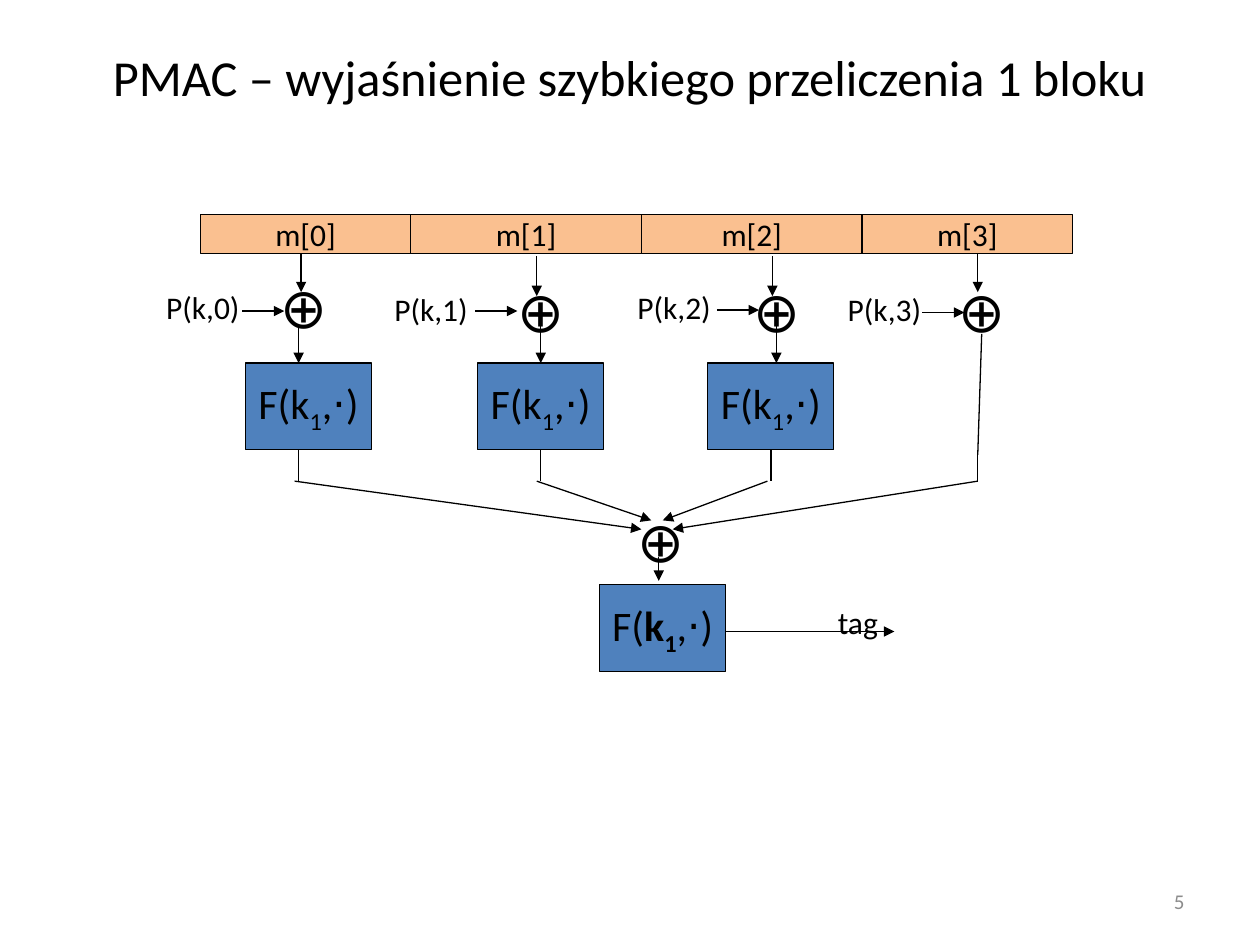
from lxml.etree import SubElement
from pptx import Presentation
from pptx.dml.color import RGBColor
from pptx.enum.shapes import MSO_CONNECTOR, MSO_SHAPE
from pptx.enum.text import MSO_ANCHOR, MSO_AUTO_SIZE, PP_ALIGN
from pptx.oxml.ns import qn
from pptx.util import Cm, Pt

BLACK, GREY, ORANGE, BLUE = "000000", "8C8C8C", "FAC090", "4F81BD"
FUNCTION_RUNS = [("F(k", {}), ("1", {"subscript": True}), (",⋅)", {})]
TAG_FUNCTION_RUNS = [("F(", {}), ("k", {"bold": True}),
                     ("1", {"bold": True, "subscript": True}), (",⋅)", {})]


def color(hex_string):
    return RGBColor.from_string(hex_string)


def set_values(target, values):
    for name, value in values.items():
        setattr(target, name, value)


class Diagram:
    """Holds the style and the current slide; all lengths are centimetres."""
    font = "Calibri"
    line_width = Pt(0.75)
    xor_size = (1.4, 1.63)
    label_height = 1.02
    function_size = (2.54, 1.75)

    def __init__(self, slide):
        self.slide = slide

    def fill_text(self, shape, runs, size, align=PP_ALIGN.LEFT, text_color=BLACK, **frame):
        """Fill the shape with one paragraph; runs is a string or (text, format) pairs."""
        set_values(shape.text_frame, {"word_wrap": False, **frame})
        paragraph = shape.text_frame.paragraphs[0]
        paragraph.alignment = align
        for text, style in ([(runs, {})] if isinstance(runs, str) else runs):
            run = paragraph.add_run()
            run.text = text
            set_values(run.font, {"name": self.font, "size": Pt(size),
                                  "bold": style.get("bold", False)})
            run.font.color.rgb = color(text_color)
            if style.get("subscript"):
                run._r.get_or_add_rPr().set("baseline", "-25000")

    def title(self, text, left, top, width, height):
        shape = self.slide.shapes.title
        set_values(shape, {"left": Cm(left), "top": Cm(top),
                           "width": Cm(width), "height": Cm(height)})
        self.fill_text(shape, text, 28.8, PP_ALIGN.CENTER, word_wrap=True,
                       vertical_anchor=MSO_ANCHOR.MIDDLE, auto_size=MSO_AUTO_SIZE.NONE)

    def text(self, text, left, top, width, height, size=18, **style):
        shape = self.slide.shapes.add_textbox(Cm(left), Cm(top), Cm(width), Cm(height))
        self.fill_text(shape, text, size, **style)

    def label(self, text, left, top, width):
        self.text(text, left, top, width, self.label_height,
                  auto_size=MSO_AUTO_SIZE.SHAPE_TO_FIT_TEXT)

    def xor(self, left, top):
        self.text("⊕", left, top, *self.xor_size, size=32,
                  auto_size=MSO_AUTO_SIZE.SHAPE_TO_FIT_TEXT)

    def box(self, runs, left, top, width, height, fill, size):
        shape = self.slide.shapes.add_shape(
            MSO_SHAPE.RECTANGLE, Cm(left), Cm(top), Cm(width), Cm(height))
        shape.shadow.inherit = False
        shape.fill.solid()
        shape.fill.fore_color.rgb = color(fill)
        shape.line.color.rgb = color(BLACK)
        shape.line.width = self.line_width
        self.fill_text(shape, runs, size, PP_ALIGN.CENTER,
                       vertical_anchor=MSO_ANCHOR.MIDDLE)

    def function(self, runs, left, top):
        self.box(runs, left, top, *self.function_size, BLUE, 24)

    def line(self, x1, y1, x2, y2, arrow=False):
        connector = self.slide.shapes.add_connector(
            MSO_CONNECTOR.STRAIGHT, Cm(x1), Cm(y1), Cm(x2), Cm(y2))
        connector.line.color.rgb = color(BLACK)
        connector.line.width = self.line_width
        if arrow:
            SubElement(connector.line._get_or_add_ln(), qn("a:tailEnd"), type="triangle")
        SubElement(connector._element.spPr, qn("a:effectLst"))

    def arrow(self, x1, y1, x2, y2):
        self.line(x1, y1, x2, y2, arrow=True)


def draw_blocks(diagram):
    """Draw the message row, then each block's masking with its key."""
    left = 4.04
    for index, width in enumerate([4.24, 4.65, 4.45, 4.24]):
        diagram.box(f"m[{index}]", left, 4.32, width, 0.79, ORANGE, 18)
        left += width

    # xor left, top; message arrow x, top, bottom; label left, top; key arrow x, y
    columns = [
        (5.41, 5.36, 6.07, 5.11, 5.89, 3.1, 5.69, 4.88, 6.27),
        (10.19, 5.44, 10.82, 5.16, 5.97, 7.7, 5.72, 9.58, 6.27),
        (14.94, 5.44, 15.57, 5.16, 5.97, 12.6, 5.69, 14.45, 6.25),
        (19.08, 5.44, 19.71, 5.11, 5.89, 16.84, 5.72, 18.59, 6.3),
    ]
    for index, column in enumerate(columns):
        xor_x, xor_y, message_x, start, end, label_x, label_y, key_x, key_y = column
        diagram.xor(xor_x, xor_y)
        diagram.arrow(message_x, start, message_x, end)
        diagram.label(f"P(k,{index})", label_x, label_y, 2.01)
        diagram.arrow(key_x, key_y, key_x + 0.85, key_y)


def draw_functions(diagram):
    # box left, x of the arrow in, x of the line out
    for left, in_x, out_x in [(4.95, 6.02, 6.02), (9.63, 10.9, 10.9), (14.27, 15.65, 15.54)]:
        diagram.function(FUNCTION_RUNS, left, 7.32)
        diagram.arrow(in_x, 6.53, in_x, 7.32)
        diagram.line(out_x, 9.07, out_x, 9.7)
    diagram.line(19.79, 6.73, 19.71, 9.17)
    diagram.line(19.71, 9.07, 19.71, 9.7)


def draw_tag(diagram):
    """Join the four branches and compute the tag."""
    diagram.xor(12.6, 10.08)
    for start_x, end_x, end_y in [(5.94, 12.93, 10.67), (10.82, 13.13, 10.49),
                                  (15.47, 13.36, 10.49), (19.71, 13.56, 10.67)]:
        diagram.arrow(start_x, 9.7, end_x, end_y)
    diagram.arrow(13.28, 11.23, 13.28, 11.71)
    diagram.function(TAG_FUNCTION_RUNS, 12.09, 11.79)
    diagram.arrow(14.63, 12.73, 18.03, 12.73)
    diagram.label("tag", 16.64, 12.04, 1.35)


def main():
    presentation = Presentation()
    set_values(presentation, {"slide_width": Cm(25.4), "slide_height": Cm(19.05)})
    diagram = Diagram(presentation.slides.add_slide(presentation.slide_layouts[5]))
    diagram.title("PMAC – wyjaśnienie szybkiego przeliczenia 1 bloku", 1.27, 0.76, 22.86, 1.55)
    diagram.text("5", 18.2, 17.66, 5.93, 1.01, size=12, align=PP_ALIGN.RIGHT,
                 text_color=GREY, word_wrap=True, vertical_anchor=MSO_ANCHOR.MIDDLE)
    draw_blocks(diagram)
    draw_functions(diagram)
    draw_tag(diagram)
    presentation.save("out.pptx")


if __name__ == "__main__":
    main()
